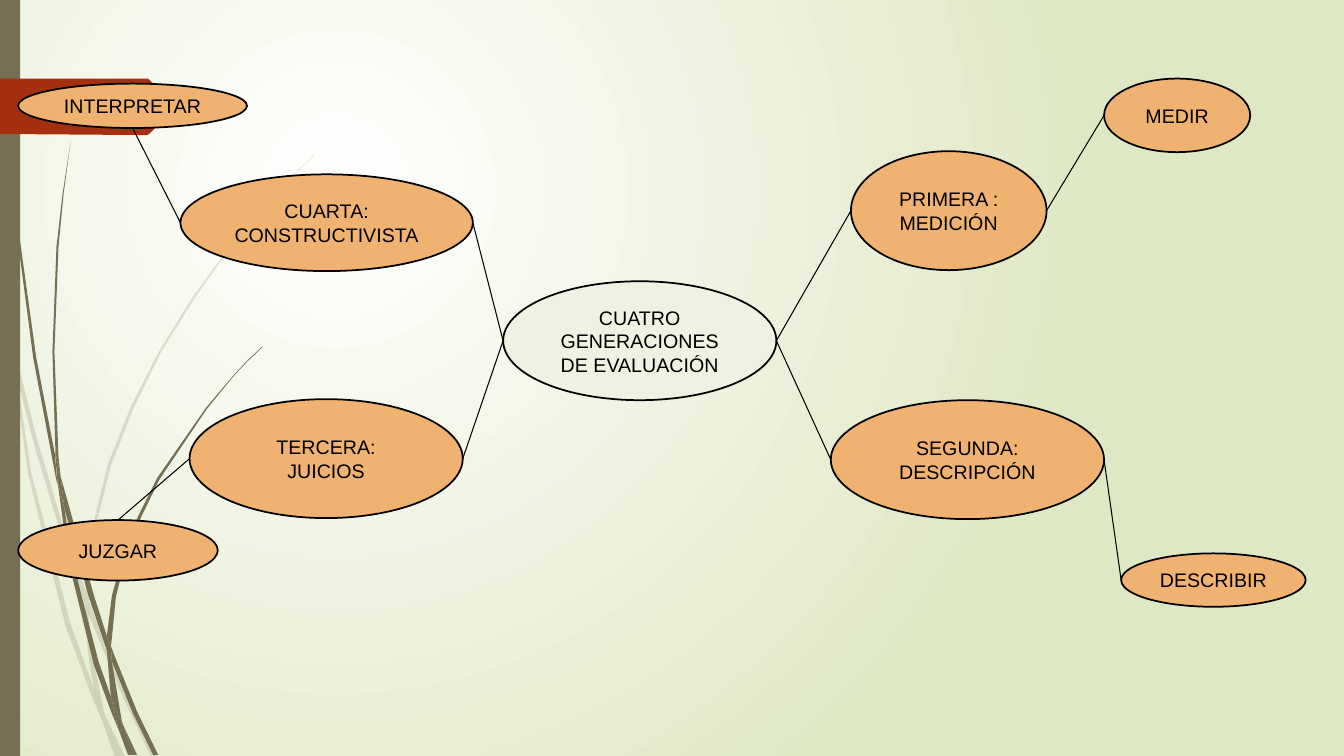
from dataclasses import dataclass

from lxml.etree import SubElement
from pptx import Presentation
from pptx.dml.color import RGBColor
from pptx.enum.shapes import MSO_CONNECTOR as Connector, MSO_SHAPE as Preset
from pptx.enum.text import MSO_ANCHOR as Anchor, PP_ALIGN as Align
from pptx.oxml.ns import qn
from pptx.util import Inches, Pt

BLACK = RGBColor(0x00, 0x00, 0x00)
WHITE = RGBColor(0xFF, 0xFF, 0xFF)
PALE_GREEN = RGBColor(0xDF, 0xE8, 0xC4)
MIST = RGBColor(0xEE, 0xF2, 0xE2)
ORANGE = RGBColor(0xF0, 0xB2, 0x70)
OLIVE = RGBColor(0x76, 0x6F, 0x54)
RUST = RGBColor(0xA5, 0x30, 0x10)

FONT_FORMAT = {"name": "Arial", "size": Pt(14), "bold": False}
FRAME_FORMAT = {"word_wrap": True, "vertical_anchor": Anchor.MIDDLE}

Point = tuple[float, float]
Outline = list[Point]


@dataclass(frozen=True)
class Idea:
    text: str
    left: float
    top: float
    width: float
    height: float
    fill: RGBColor = ORANGE

    def side(self, name: str) -> Point:
        across, down = {"left": (0, 0.5), "right": (1, 0.5), "top": (0.5, 0), "bottom": (0.5, 1)}[name]
        return self.left + across * self.width, self.top + down * self.height


@dataclass(frozen=True)
class Link:
    start: Idea
    start_side: str
    end: Idea
    end_side: str


@dataclass(frozen=True)
class Plant:
    opacity: int
    strands: list[Outline]


FADED_GRASS = Plant(20, [
    [(0.11, 3.5), (0.09, 3.22), (0, 2.82), (0, 2.99), (0.1, 3.44)],
    [(0.58, 5.22), (0.84, 5.99), (0.85, 5.86), (0.62, 5.2), (0.36, 4.33), (0.14, 3.45),
     (0.17, 3.76), (0.36, 4.49)],
    [(0.92, 6.07), (0.88, 5.96), (0.88, 6.1), (1.23, 6.94), (1.5, 7.51), (1.55, 7.51), (1.27, 6.92)],
    [(1.19, 7.51), (1.24, 7.51), (1.05, 7.11)],
    [(0.93, 6.83), (0.7, 6.19), (0.31, 4.69), (0.17, 3.76), (0.11, 3.5), (0.28, 4.7),
     (0.65, 6.21), (0.92, 6.93), (1.01, 7.14), (0.99, 7.07)],
    [(0.84, 5.99), (0.87, 6.46), (0.93, 6.83), (0.96, 6.92), (1.05, 7.11), (1.03, 7.06),
     (0.91, 6.46), (0.88, 6.1), (0.88, 6.08)],
    [(0.88, 5.84), (0.95, 5.22), (1.1, 4.62), (1.33, 4.04), (1.6, 3.49), (1.93, 2.96), (2.29, 2.45),
     (2.68, 1.98), (2.9, 1.75), (3.12, 1.54), (3.12, 1.53), (2.89, 1.75), (2.68, 1.97),
     (2.28, 2.44), (1.91, 2.95), (1.58, 3.48), (1.3, 4.03), (1.07, 4.61), (0.92, 5.22),
     (0.85, 5.84), (0.85, 5.86), (0.88, 5.96)],
    [(1.01, 7.14), (1.14, 7.51), (1.19, 7.51)],
    [(0.88, 6.08), (0.88, 6.1), (0.88, 5.96), (0.85, 5.86), (0.84, 5.99)],
    [(0.96, 6.92), (0.93, 6.83), (0.99, 7.07), (1.01, 7.14), (1.19, 7.51), (1.05, 7.11)],
])

GRASS = Plant(100, [
    [(0.07, 1.1), (0.17, 2.33), (0.33, 3.55), (0.56, 4.77), (0.57, 4.81), (0.55, 4.57),
     (0.55, 4.53), (0.36, 3.55), (0.19, 2.32), (0.08, 1.09), (0.05, 0.48), (0.04, 0),
     (0.03, 0), (0.04, 0.48)],
    [(0.88, 5.92), (1.06, 6.45), (1.06, 6.33), (1.06, 6.31), (0.93, 5.9), (0.6, 4.72), (0.64, 5.05)],
    [(1.13, 6.49), (1.1, 6.41), (1.11, 6.56), (1.32, 7.08), (1.52, 7.49), (1.57, 7.49), (1.36, 7.06)],
    [(1.1, 6.91), (0.98, 6.57), (0.72, 5.56), (0.64, 5.05), (0.57, 4.77), (0.68, 5.57),
     (0.93, 6.59), (1.11, 7.08), (1.17, 7.22), (1.16, 7.17)],
    [(0.6, 4.72), (0.58, 4.53), (0.54, 3.49), (0.58, 2.45), (0.63, 1.93), (0.7, 1.41),
     (0.62, 1.93), (0.56, 2.45), (0.52, 3.49), (0.55, 4.49)],
    [(1.33, 7.49), (1.36, 7.49), (1.22, 7.19)],
    [(0.57, 4.77), (0.64, 5.05), (0.6, 4.72), (0.55, 4.49), (0.55, 4.53)],
    [(1.11, 6.33), (1.15, 5.92), (1.25, 5.52), (1.4, 5.13), (1.58, 4.76), (2.05, 4.06),
     (2.31, 3.74), (2.45, 3.59), (2.61, 3.44), (2.6, 3.44), (2.45, 3.58), (2.31, 3.73),
     (2.04, 4.05), (1.56, 4.74), (1.37, 5.12), (1.22, 5.51), (1.11, 5.91), (1.06, 6.31), (1.1, 6.41)],
    [(1.17, 7.22), (1.27, 7.49), (1.31, 7.49)],
    [(1.06, 6.45), (1.1, 6.91), (1.16, 7.06), (1.22, 7.19), (1.21, 7.16), (1.11, 6.56), (1.09, 6.51)],
    [(1.06, 6.45), (1.09, 6.51), (1.11, 6.56), (1.1, 6.41), (1.06, 6.31), (1.06, 6.33)],
    [(1.16, 7.06), (1.1, 6.91), (1.16, 7.17), (1.17, 7.22), (1.3, 7.49), (1.33, 7.49), (1.22, 7.19)],
])

RIBBON = [(1.73, 1.08), (1.48, 1.33), (1.46, 1.34), (1.36, 1.34), (0, 1.33), (0, 0.78),
          (1.46, 0.78), (1.48, 0.79), (1.73, 1.04), (1.74, 1.06)]

FIRST = Idea("PRIMERA : MEDICIÓN", 8.44, 1.5, 1.94, 1.18)
THIRD = Idea("TERCERA: JUICIOS", 1.88, 3.96, 2.71, 1.18)
FOURTH = Idea("CUARTA: CONSTRUCTIVISTA", 1.79, 1.73, 2.9, 0.96)
SECOND = Idea("SEGUNDA: DESCRIPCIÓN", 8.24, 3.97, 2.71, 1.18)
GENERATIONS = Idea("CUATRO GENERACIONES DE EVALUACIÓN", 4.99, 2.79, 2.71, 1.18, MIST)
MEASURE = Idea("MEDIR", 10.95, 0.78, 1.45, 0.73)
JUDGE = Idea("JUZGAR", 0.18, 5.16, 1.98, 0.6)
INTERPRET = Idea("INTERPRETAR", 0.18, 0.83, 2.27, 0.44)
DESCRIBE = Idea("DESCRIBIR", 11.12, 5.49, 1.83, 0.53)
IDEAS = [FIRST, THIRD, FOURTH, SECOND, GENERATIONS, MEASURE, JUDGE, INTERPRET, DESCRIBE]

LINKS = [
    Link(GENERATIONS, "right", FIRST, "left"),
    Link(FIRST, "right", MEASURE, "left"),
    Link(GENERATIONS, "right", SECOND, "left"),
    Link(SECOND, "right", DESCRIBE, "left"),
    Link(FOURTH, "right", GENERATIONS, "left"),
    Link(THIRD, "right", GENERATIONS, "left"),
    Link(INTERPRET, "bottom", FOURTH, "left"),
    Link(JUDGE, "top", THIRD, "left"),
]


def paint_background(slide) -> None:
    fill = slide.background.fill
    fill.gradient()
    for stop, color in zip(fill.gradient_stops, (WHITE, PALE_GREEN)):
        stop.color.rgb = color
    gradient = slide.element.find(".//" + qn("a:gradFill"))
    gradient.remove(gradient.find(qn("a:lin")))
    circle = SubElement(gradient, qn("a:path"), {"path": "circle"})
    SubElement(circle, qn("a:fillToRect"), {"l": "50000", "t": "50000", "r": "100000", "b": "100000"})


def paint_flat(shape, color: RGBColor, opacity: int = 100) -> None:
    shape.shadow.inherit = False
    shape.fill.solid()
    shape.fill.fore_color.rgb = color
    shape.line.fill.background()
    if opacity < 100:
        tint = shape.element.spPr.find(".//" + qn("a:srgbClr"))
        SubElement(tint, qn("a:alpha"), {"val": str(opacity * 1000)})


def draw_outline(slide, outline: Outline, color: RGBColor, opacity: int = 100) -> None:
    start, *rest = [(Inches(x), Inches(y)) for x, y in outline]
    builder = slide.shapes.build_freeform(*start)
    builder.add_line_segments(rest, close=True)
    paint_flat(builder.convert_to_shape(), color, opacity)


def draw_idea(slide, idea: Idea) -> None:
    box = map(Inches, (idea.left, idea.top, idea.width, idea.height))
    ellipse = slide.shapes.add_shape(Preset.OVAL, *box)
    paint_flat(ellipse, idea.fill)
    ellipse.line.color.rgb = BLACK
    ellipse.line.width = Pt(1.25)
    frame = ellipse.text_frame
    for key, value in FRAME_FORMAT.items():
        setattr(frame, key, value)
    paragraph = frame.paragraphs[0]
    paragraph.alignment = Align.CENTER
    run = paragraph.add_run()
    run.text = idea.text
    for key, value in FONT_FORMAT.items():
        setattr(run.font, key, value)
    run.font.color.rgb = BLACK


def draw_link(slide, link: Link) -> None:
    ends = (*link.start.side(link.start_side), *link.end.side(link.end_side))
    line = slide.shapes.add_connector(Connector.STRAIGHT, *map(Inches, ends))
    line.line.color.rgb = BLACK
    line.line.width = Pt(0.75)
    SubElement(line.element.spPr, qn("a:effectLst"))


def main() -> None:
    deck = Presentation()
    deck.slide_width, deck.slide_height = Inches(13.33), Inches(7.5)
    slide = deck.slides.add_slide(deck.slide_layouts[6])
    paint_background(slide)
    for plant in (FADED_GRASS, GRASS):
        for strand in plant.strands:
            draw_outline(slide, strand, OLIVE, plant.opacity)
    side_band = slide.shapes.add_shape(Preset.RECTANGLE, 0, 0, Inches(0.2), deck.slide_height)
    paint_flat(side_band, OLIVE)
    draw_outline(slide, RIBBON, RUST)
    for idea in IDEAS:
        draw_idea(slide, idea)
    for link in LINKS:
        draw_link(slide, link)
    deck.save("out.pptx")


if __name__ == "__main__":
    main()
